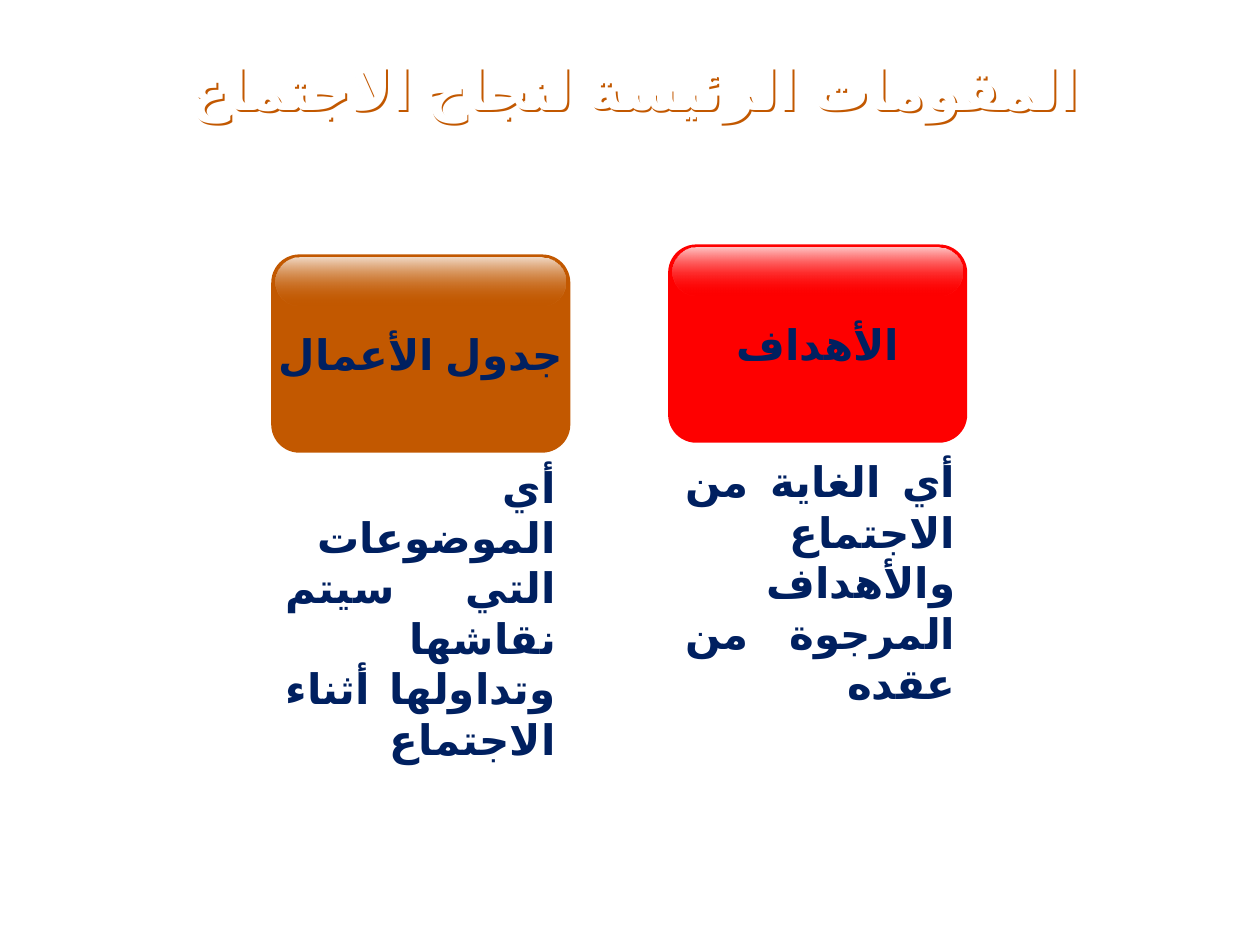
from lxml import etree
from pptx import Presentation
from pptx.dml.color import RGBColor
from pptx.enum.lang import MSO_LANGUAGE_ID
from pptx.enum.shapes import MSO_SHAPE
from pptx.enum.text import MSO_ANCHOR, MSO_AUTO_SIZE, PP_ALIGN
from pptx.oxml.ns import qn
from pptx.util import Pt

ARABIC = MSO_LANGUAGE_ID.ARABIC
ROUNDED = MSO_SHAPE.ROUNDED_RECTANGLE
MIDDLE = MSO_ANCHOR.MIDDLE
GROW, FIXED = MSO_AUTO_SIZE.SHAPE_TO_FIT_TEXT, MSO_AUTO_SIZE.NONE
CENTER, JUSTIFY = PP_ALIGN.CENTER, PP_ALIGN.JUSTIFY

FONT = "Arial"
WHITE, NAVY, ORANGE, RED = "FFFFFF", "002060", "C25800", "FE0000"
TITLE = "المقومات الرئيسة لنجاح الاجتماع "
CARD_SIZE = (170.9, 113.3)
# label, colour, gloss colour, left, top
CARDS = [
    ("جدول الأعمال", ORANGE, "F1DAC6", 155, 145.4),
    ("الأهداف", RED, "FFC6C6", 381.8, 139.7),
]
# wording, left, top, width, height
CAPTIONS = [
    ("أي الغاية من الاجتماع والأهداف المرجوة من عقده", 384.5, 257, 168.5, 94.3),
    ("أي الموضوعات التي سيتم نقاشها وتداولها أثناء الاجتماع", 156.2, 259.9, 168.5, 123.8),
]


def rgb(value):
    return RGBColor.from_string(value)


def points(*lengths):
    return [Pt(length) for length in lengths]


def write(frame, text, size, color, alignment):
    """Put one bold right-to-left paragraph in the frame."""
    frame.text = text
    para = frame.paragraphs[0]
    para.alignment = alignment
    para._p.get_or_add_pPr().set("rtl", "1")
    span = para.runs[0]
    span.font.name, span.font.size, span.font.bold = FONT, Pt(size), True
    span.font.language_id = ARABIC
    span.font.color.rgb = rgb(color)
    script_font = etree.SubElement(span._r.get_or_add_rPr(), qn("a:cs"))
    script_font.set("typeface", FONT)


def add_text_shadow(shape, color):
    """Cast a hard shadow, which falls from the text of an unfilled shape."""
    effects = etree.SubElement(shape._element.spPr, qn("a:effectLst"))
    shadow = etree.SubElement(effects, qn("a:outerShdw"), blurRad="0",
                              dist=str(Pt(1.5)), dir="2700000", algn="tl")
    etree.SubElement(shadow, qn("a:srgbClr"), val=color)


def set_title(page):
    title = page.shapes.title
    title.left, title.top, title.width, title.height = points(8.6, 30.2, 699.8, 40.3)
    title.fill.background()
    frame = title.text_frame
    frame.word_wrap, frame.vertical_anchor = True, MIDDLE
    frame.auto_size = FIXED
    write(frame, TITLE, 32, WHITE, CENTER)
    add_text_shadow(title, ORANGE)


def add_rounded(group, left, top, width, height, corner):
    box = group.shapes.add_shape(ROUNDED, *points(left, top, width, height))
    box.adjustments[0] = corner
    box.shadow.inherit = False
    box.line.fill.background()
    return box


def add_card(page, label, color, gloss_color, left, top):
    group = page.shapes.add_group_shape()
    box = add_rounded(group, left, top, *CARD_SIZE, 0.142)
    box.fill.solid()
    box.fill.fore_color.rgb = rgb(color)
    frame = box.text_frame
    frame.word_wrap, frame.vertical_anchor = False, MIDDLE
    write(frame, label, 24, NAVY, CENTER)

    gloss = add_rounded(group, left + 2.6, top + 1.6, 165.6, 27.4, 0.5)
    gloss.fill.gradient()
    gloss.fill.gradient_angle = 270
    for stop, stop_color in zip(gloss.fill.gradient_stops, (gloss_color, color)):
        stop.color.rgb = rgb(stop_color)
    last_color = gloss._element.spPr.findall(".//" + qn("a:srgbClr"))[-1]
    etree.SubElement(last_color, qn("a:alpha"), val="0")


def add_caption(page, text, *place):
    frame = page.shapes.add_textbox(*points(*place)).text_frame
    frame.word_wrap, frame.auto_size = True, GROW
    write(frame, text, 24, NAVY, JUSTIFY)


def main():
    deck = Presentation()
    deck.slide_width, deck.slide_height = points(720, 540)
    page = deck.slides.add_slide(deck.slide_layouts[5])
    set_title(page)
    for card in CARDS:
        add_card(page, *card)
    for caption in CAPTIONS:
        add_caption(page, *caption)
    deck.save("out.pptx")


if __name__ == "__main__":
    main()
